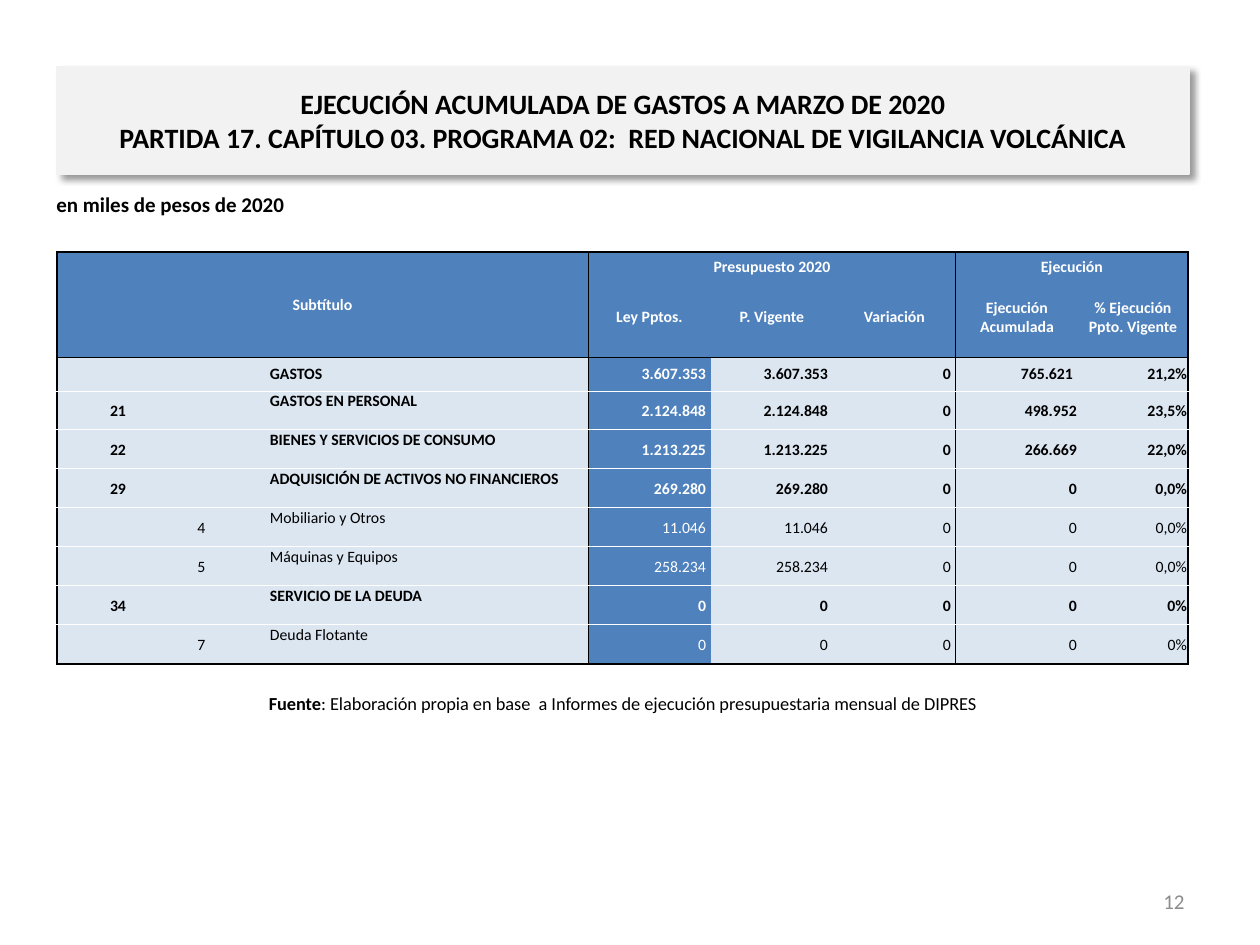
import dataclasses

import lxml.etree
import pptx
import pptx.dml.color
import pptx.enum.text
import pptx.oxml
import pptx.oxml.ns
import pptx.util

ALIGN = pptx.enum.text.PP_ALIGN
ANCHOR = pptx.enum.text.MSO_ANCHOR
NS = pptx.oxml.ns.nsdecls("a")


@dataclasses.dataclass(frozen=True)
class Theme:
    font: str = "Calibri"
    black: str = "000000"
    white: str = "FFFFFF"
    gray: str = "8C8C8C"
    panel: str = "F2F2F2"
    blue: str = "4F81BD"
    pale: str = "DCE6F1"
    title: float = 16
    label: float = 12
    note: float = 10.5
    cell: float = 9


def px(size):
    return pptx.util.Emu(round(size * 914400 / 126))


def rgb(color):
    return pptx.dml.color.RGBColor.from_string(color)


class Page:
    def __init__(self, slide, theme):
        self.slide = slide
        self.theme = theme

    def style(self, run, size, color, bold):
        run.font.name = self.theme.font
        run.font.size = pptx.util.Pt(size)
        run.font.bold = bold
        run.font.color.rgb = rgb(color)

    def title(self, box, text):
        shape = self.slide.shapes.title
        shape.left, shape.top, shape.width, shape.height = map(px, box)
        shape.fill.solid()
        shape.fill.fore_color.rgb = rgb(self.theme.panel)
        shape.line.color.rgb = rgb(self.theme.panel)
        shape.line.width = pptx.util.Pt(0.75)
        shape._element.spPr.append(pptx.oxml.parse_xml(
            f'<a:effectLst {NS}><a:outerShdw blurRad="50800" dist="38100" dir="2700000" '
            f'algn="tl" rotWithShape="0"><a:srgbClr val="{self.theme.black}">'
            '<a:alpha val="40000"/></a:srgbClr></a:outerShdw></a:effectLst>'))
        frame = shape.text_frame
        frame.auto_size = pptx.enum.text.MSO_AUTO_SIZE.NONE
        frame.vertical_anchor = ANCHOR.MIDDLE
        para = frame.paragraphs[0]
        para.text = text
        para.alignment = ALIGN.CENTER
        for run in para.runs:
            self.style(run, self.theme.title, self.theme.black, True)

    def text(self, box, parts, size, color, align=ALIGN.LEFT, anchor=ANCHOR.MIDDLE):
        frame = self.slide.shapes.add_textbox(*map(px, box)).text_frame
        frame.word_wrap = True
        frame.vertical_anchor = anchor
        para = frame.paragraphs[0]
        para.alignment = align
        for words, bold in parts:
            run = para.add_run()
            run.text = words
            self.style(run, size, color, bold)

    def table(self, box, cols, rows, spans):
        grid = self.slide.shapes.add_table(len(rows), len(cols), *map(px, box)).table
        for col, width in zip(grid.columns, cols):
            col.width = px(width)
        for row, height in zip(grid.rows, rows):
            row.height = px(height)
        for top, left, down, right in spans:
            grid.cell(top, left).merge(grid.cell(down, right))
        return grid

    def edge(self, cell, side, rule):
        color, width = rule or (None, 0)
        paint = f'<a:solidFill><a:srgbClr val="{color}"/></a:solidFill>' if color else "<a:noFill/>"
        cell._tc.get_or_add_tcPr().append(pptx.oxml.parse_xml(
            f'<a:ln{side} {NS} w="{round(width * 12700)}">{paint}</a:ln{side}>'))

    def cell(self, cell, text, edges, fill, color, bold, align, anchor, gap):
        for side, rule in zip("LRTB", edges):
            self.edge(cell, side, rule)
        cell.fill.solid()
        cell.fill.fore_color.rgb = rgb(fill)
        cell.margin_left = cell.margin_top = px(1)
        cell.margin_right, cell.margin_bottom = px(gap), 0
        cell.vertical_anchor = anchor
        para = cell.text_frame.paragraphs[0]
        para.alignment = align
        if text:
            para.text = text
            self.style(para.runs[0], self.theme.cell, color, bold)
        else:
            end = lxml.etree.SubElement(para._p, pptx.oxml.ns.qn("a:endParaRPr"))
            end.set("sz", str(self.theme.cell * 100))


HEAD = [
    ["Subtítulo", "", "", "", "Presupuesto 2020", "", "", "Ejecución", ""],
    ["", "", "", "", "Ley Pptos.", "P. Vigente", "Variación",
     "Ejecución Acumulada", "% Ejecución Ppto. Vigente"],
]
DATA = [
    ("", "", "GASTOS", "3.607.353", "765.621", "21,2%"),
    ("21", "", "GASTOS EN PERSONAL", "2.124.848", "498.952", "23,5%"),
    ("22", "", "BIENES Y SERVICIOS DE CONSUMO", "1.213.225", "266.669", "22,0%"),
    ("29", "", "ADQUISICIÓN DE ACTIVOS NO FINANCIEROS", "269.280", "0", "0,0%"),
    ("", "4", "Mobiliario y Otros", "11.046", "0", "0,0%"),
    ("", "5", "Máquinas y Equipos", "258.234", "0", "0,0%"),
    ("34", "", "SERVICIO DE LA DEUDA", "0", "0", "0%"),
    ("", "7", "Deuda Flotante", "0", "0", "0%"),
]
COLS = [122, 45, 45, 319, 123, 122, 123, 122, 110]
ROWS = [25, 80, 34] + [39] * 7
SPANS = [(0, 0, 1, 3), (0, 4, 0, 6), (0, 7, 0, 8)]


def fill_grid(page, grid):
    theme = page.theme
    thick, thin, light = (theme.black, 1), (theme.black, 0.5), (theme.white, 0.5)
    lefts = {0: thick, 4: thin, 7: thin}
    rights = {3: thin, 6: thin, 8: thick}
    tops = {0: thick, 1: None, 2: thin}
    lows = {0: None, 1: thin, len(ROWS) - 1: thick}
    body = [[code, sub, "", name, law, law, "0", done, rate]
            for code, sub, name, law, done, rate in DATA]
    for r, row in enumerate(HEAD + body):
        head = r < len(HEAD)
        for c, text in enumerate(row):
            cell = grid.cell(r, c)
            edges = (lefts.get(c), rights.get(c + cell.span_width - 1),
                     tops.get(r, light), lows.get(r + cell.span_height - 1, light))
            dark = head or c == 4
            align = ALIGN.CENTER if head or c < 3 else ALIGN.LEFT if c == 3 else ALIGN.RIGHT
            anchor = ANCHOR.MIDDLE
            if r == 0 and c > 3:
                anchor = ANCHOR.BOTTOM
            elif r > 2 and c == 3:
                anchor = ANCHOR.TOP
            inset = not head and (4 <= c <= 6 or (r == 2 and c == 7))
            page.cell(cell, text, edges, theme.blue if dark else theme.pale,
                      theme.white if dark else theme.black, head or not row[1],
                      align, anchor, 5 if inset else 1)


def main():
    deck = pptx.Presentation()
    deck.slide_width, deck.slide_height = px(1260), px(945)
    theme = Theme()
    page = Page(deck.slides.add_slide(deck.slide_layouts[5]), theme)
    page.text((57, 684, 1132, 39),
              [("Fuente", True),
               (": Elaboración propia en base  a Informes de ejecución "
                "presupuestaria mensual de DIPRES", False)],
              theme.note, theme.black, ALIGN.CENTER)
    page.text((903, 876, 294, 50), [("12", False)], theme.label, theme.gray, ALIGN.RIGHT)
    page.text((44, 185, 1032, 49), [("en miles de pesos de 2020", True)],
              theme.label, theme.black, anchor=ANCHOR.TOP)
    page.title((57, 67, 1132, 107),
               "EJECUCIÓN ACUMULADA DE GASTOS A MARZO DE 2020\v"
               "PARTIDA 17. CAPÍTULO 03. PROGRAMA 02:  RED NACIONAL DE VIGILANCIA VOLCÁNICA")
    grid = page.table((57, 252, sum(COLS), sum(ROWS)), COLS, ROWS, SPANS)
    fill_grid(page, grid)
    deck.save("out.pptx")


if __name__ == "__main__":
    main()
